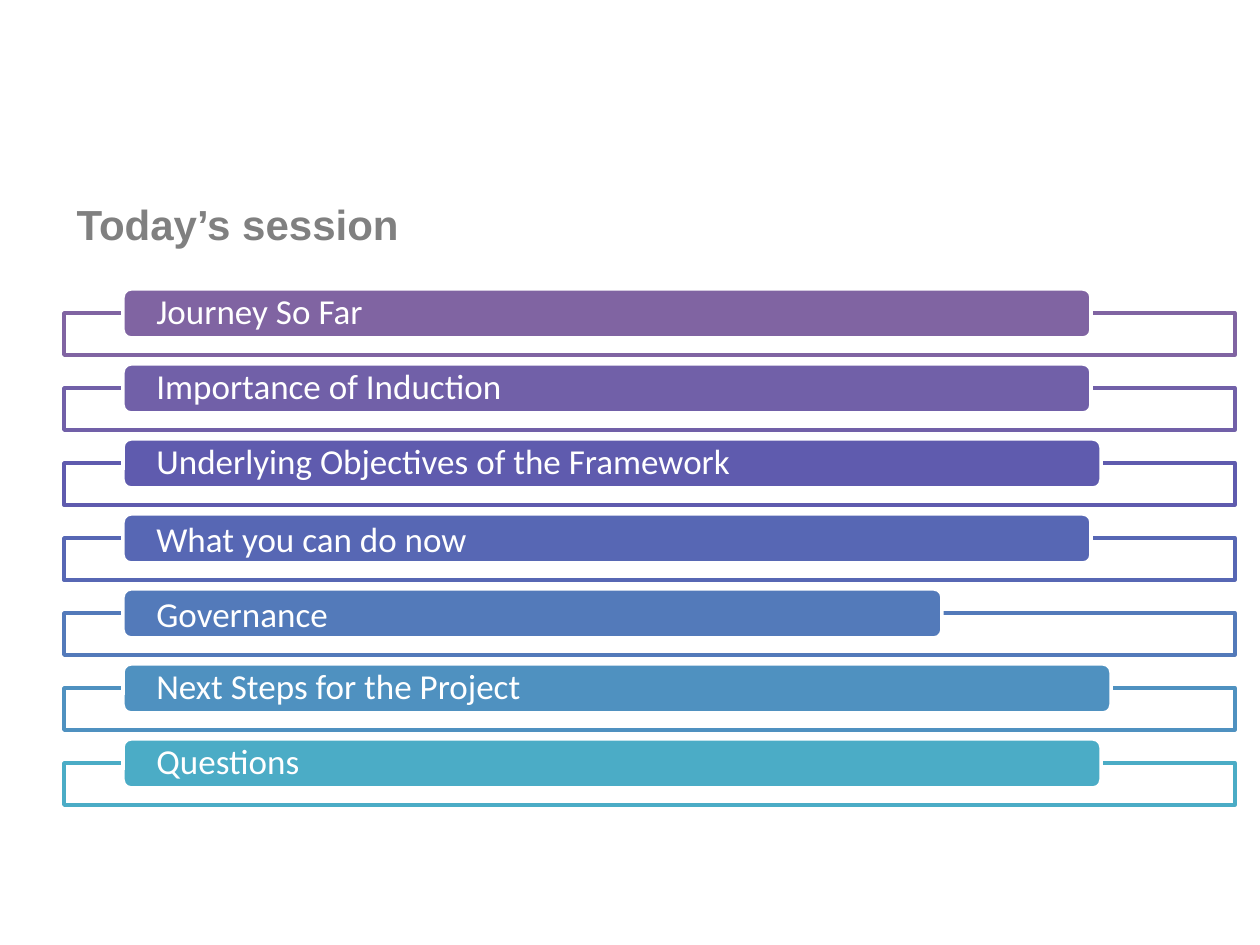
from lxml.etree import SubElement
from pptx import Presentation
from pptx.dml.color import RGBColor
from pptx.enum.shapes import MSO_SHAPE as Shape
from pptx.enum.text import MSO_ANCHOR as Anchor, PP_ALIGN as Align
from pptx.oxml.ns import qn
from pptx.util import Pt

COLORS = {
    "white": "FFFFFF", "title": "808080",
    "purple": "8064A2", "violet": "7160A8", "indigo": "5F5BAE",
    "royal": "5767B4", "blue": "537ABA", "sky": "4F91C0", "teal": "4BACC6",
}
TITLE = "Today’s session"
AGENDA = [
    ("Journey So Far", "purple", 968, 0.9),
    ("Importance of Induction", "violet", 968, 0.9),
    ("Underlying Objectives of the Framework", "indigo", 978, 0.9),
    ("What you can do now", "royal", 968, 1.0),
    ("Governance", "blue", 819, 1.0),
    ("Next Steps for the Project", "sky", 988, 0.9),
    ("Questions", "teal", 978, 0.9),
]
FRAME_LEFT, FRAME_WIDTH, FRAME_HEIGHT, FRAME_DROP = 64, 1171, 42, 24
BAR_LEFT, BAR_TOP, BAR_HEIGHT, BAR_INSET = 123, 289, 49, 31
ROW_PITCH = 75


def px(value):
    return round(value * 914400 / 126)


def color(name):
    return RGBColor.from_string(COLORS[name])


def set_font(paragraph, name, size, color_name, bold=False):
    font = paragraph.font
    font.name, font.size, font.bold = name, Pt(size), bold
    font.color.rgb = color(color_name)


def add_box(slide, kind, bounds, fill, line):
    shape = slide.shapes.add_shape(kind, *map(px, bounds))
    shape.shadow.inherit = False
    shape.fill.solid()
    shape.fill.fore_color.rgb = color(fill)
    shape.line.color.rgb = color(line)
    shape.line.width = Pt(2)
    return shape


def add_row(slide, index, text, accent, width, spacing):
    top = BAR_TOP + index * ROW_PITCH
    frame_bounds = (FRAME_LEFT, top + FRAME_DROP, FRAME_WIDTH, FRAME_HEIGHT)
    frame = add_box(slide, Shape.RECTANGLE, frame_bounds, "white", accent)
    fill_color = frame.fill._xPr.find(qn("a:solidFill"))[0]
    SubElement(fill_color, qn("a:alpha"), val="90000")

    bar_bounds = (BAR_LEFT, top, width, BAR_HEIGHT)
    bar = add_box(slide, Shape.ROUNDED_RECTANGLE, bar_bounds, accent, "white")
    text_frame = bar.text_frame
    text_frame.word_wrap = True
    text_frame.vertical_anchor = Anchor.MIDDLE
    text_frame.margin_left = text_frame.margin_right = px(BAR_INSET)
    text_frame.margin_top = text_frame.margin_bottom = 0
    paragraph = text_frame.paragraphs[0]
    paragraph.text = text
    paragraph.alignment = Align.LEFT
    paragraph.line_spacing = spacing
    set_font(paragraph, "Calibri", 20, "white")


def main():
    presentation = Presentation()
    presentation.slide_width, presentation.slide_height = px(1260), px(945)
    slide = presentation.slides.add_slide(presentation.slide_layouts[5])

    title = slide.shapes.title
    title.left, title.top, title.width, title.height = map(px, (64, 165, 1134, 118))
    title.text_frame.vertical_anchor = Anchor.MIDDLE
    paragraph = title.text_frame.paragraphs[0]
    paragraph.text = TITLE
    paragraph.alignment = Align.LEFT
    set_font(paragraph, "Arial", 24, "title", bold=True)

    for index, row in enumerate(AGENDA):
        add_row(slide, index, *row)
    presentation.save("out.pptx")


if __name__ == "__main__":
    main()
